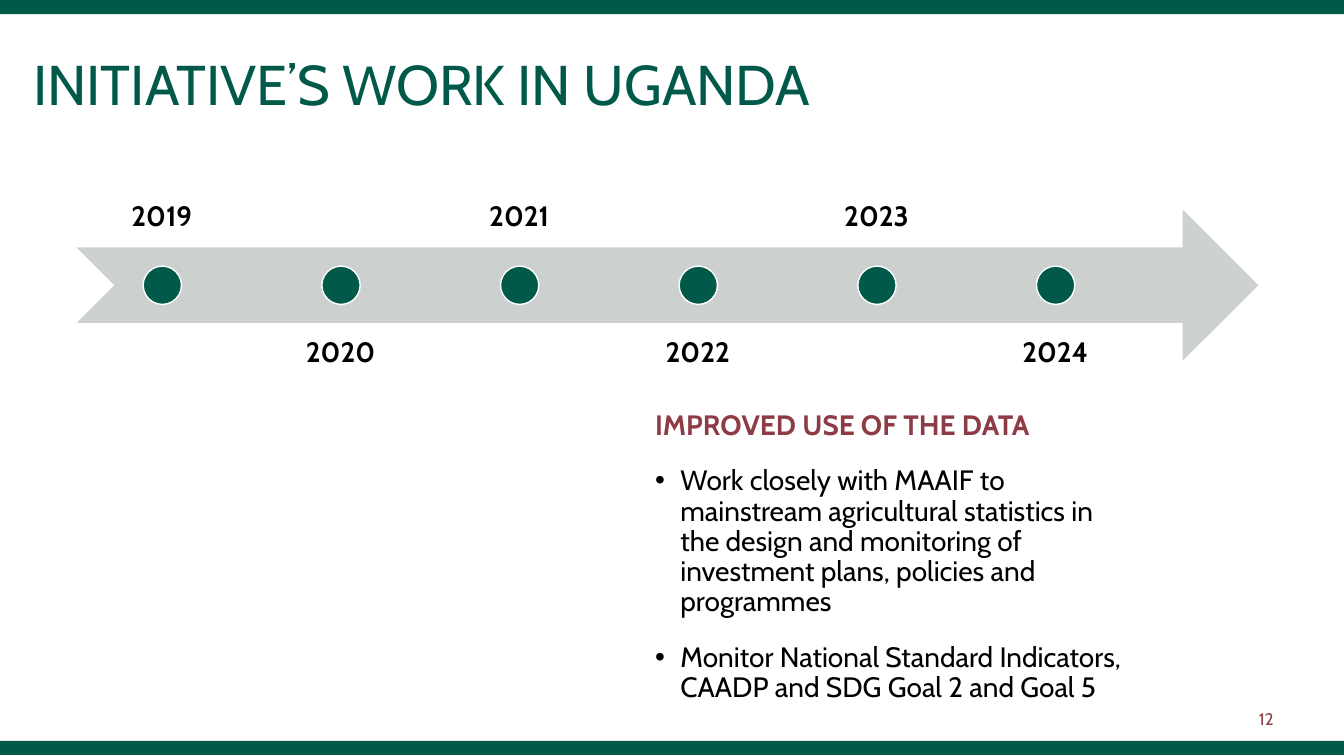
from dataclasses import dataclass

from lxml.etree import SubElement
from pptx import Presentation
from pptx.dml.color import RGBColor
from pptx.enum.shapes import MSO_SHAPE
from pptx.enum.text import MSO_ANCHOR, PP_ALIGN
from pptx.oxml.ns import qn
from pptx.util import Inches, Pt


@dataclass(frozen=True)
class Theme:
    font: str = "Cabin"
    green: str = "005949"
    red: str = "8D3C46"
    grey: str = "CCD1D0"
    black: str = "000000"
    white: str = "FFFFFF"
    title: int = 40
    body: int = 20
    small: int = 12


THEME = Theme()
WIDE, HIGH = 13.33, 7.5
YEARS = range(2019, 2025)
HEADING = "IMPROVED USE OF THE DATA"
POINTS = (
    "Work closely with MAAIF to mainstream agricultural statistics in the "
    "design and monitoring of investment plans, policies and programmes",
    "Monitor National Standard Indicators, CAADP and SDG Goal 2 and Goal 5",
)


def add_form(slide, kind, box, fill, line=None):
    form = slide.shapes.add_shape(kind, *map(Inches, box))
    form.shadow.inherit = False
    form.fill.solid()
    form.fill.fore_color.rgb = RGBColor.from_string(fill)
    if line:
        form.line.color.rgb = RGBColor.from_string(line)
        form.line.width = Pt(1)
    else:
        form.line.fill.background()


def add_frame(slide, box, anchor=MSO_ANCHOR.TOP, inset=None):
    frame = slide.shapes.add_textbox(*map(Inches, box)).text_frame
    frame.word_wrap = True
    frame.vertical_anchor = anchor
    if inset is not None:
        frame.margin_left = frame.margin_right = Inches(inset)
        frame.margin_top = frame.margin_bottom = Inches(inset)
    return frame


def style(para, text, size, color, bold=False, align=PP_ALIGN.LEFT):
    para.text = text
    para.alignment = align
    para.line_spacing = 0.9
    for run in para.runs:
        run.font.name = THEME.font
        run.font.size = Pt(size)
        run.font.bold = bold
        run.font.color.rgb = RGBColor.from_string(color)


def add_bullet(para):
    props = para._p.get_or_add_pPr()
    props.set("marL", str(Inches(0.25)))
    props.set("indent", str(-Inches(0.25)))
    SubElement(props, qn("a:buFont"), typeface="Arial")
    SubElement(props, qn("a:buChar"), char="•")


def add_year(slide, index, year):
    """Place a dot on the arrow, with its year above or below in turn."""
    left = 0.76 + 1.772 * index
    above = index % 2 == 0
    top, anchor = (0.96, MSO_ANCHOR.BOTTOM) if above else (3.21, MSO_ANCHOR.TOP)
    frame = add_frame(slide, (left, top, 1.69, 1.5), anchor, 0.16)
    style(frame.paragraphs[0], str(year), THEME.body, THEME.black, True,
          PP_ALIGN.CENTER)
    add_form(slide, MSO_SHAPE.OVAL, (left + 0.66, 2.64, 0.38, 0.38),
             THEME.green, THEME.white)


def add_body(slide):
    frame = add_frame(slide, (6.4, 4.03, 4.87, 3.95))
    head = frame.paragraphs[0]
    style(head, HEADING, THEME.body, THEME.red, True)
    head.space_after = Pt(18)
    for point in POINTS:
        para = frame.add_paragraph()
        style(para, point, THEME.body, THEME.black)
        para.space_after = Pt(18)
        add_bullet(para)


def main():
    deck = Presentation()
    deck.slide_width, deck.slide_height = Inches(WIDE), Inches(HIGH)
    slide = deck.slides.add_slide(deck.slide_layouts[6])

    for top in (0, 7.35):
        add_form(slide, MSO_SHAPE.RECTANGLE, (0, top, WIDE, 0.14), THEME.green)
    number = add_frame(slide, (9.73, 6.94, 3, 0.4), MSO_ANCHOR.MIDDLE)
    style(number.paragraphs[0], "12", THEME.small, THEME.red,
          align=PP_ALIGN.RIGHT)

    add_form(slide, MSO_SHAPE.NOTCHED_RIGHT_ARROW, (0.76, 2.08, 11.72, 1.5),
             THEME.grey)
    for index, year in enumerate(YEARS):
        add_year(slide, index, year)

    add_body(slide)
    title = add_frame(slide, (0.23, 0.52, 9.32, 0.78))
    style(title.paragraphs[0], "INITIATIVE’S WORK IN UGANDA", THEME.title,
          THEME.green)
    deck.save("out.pptx")


if __name__ == "__main__":
    main()
